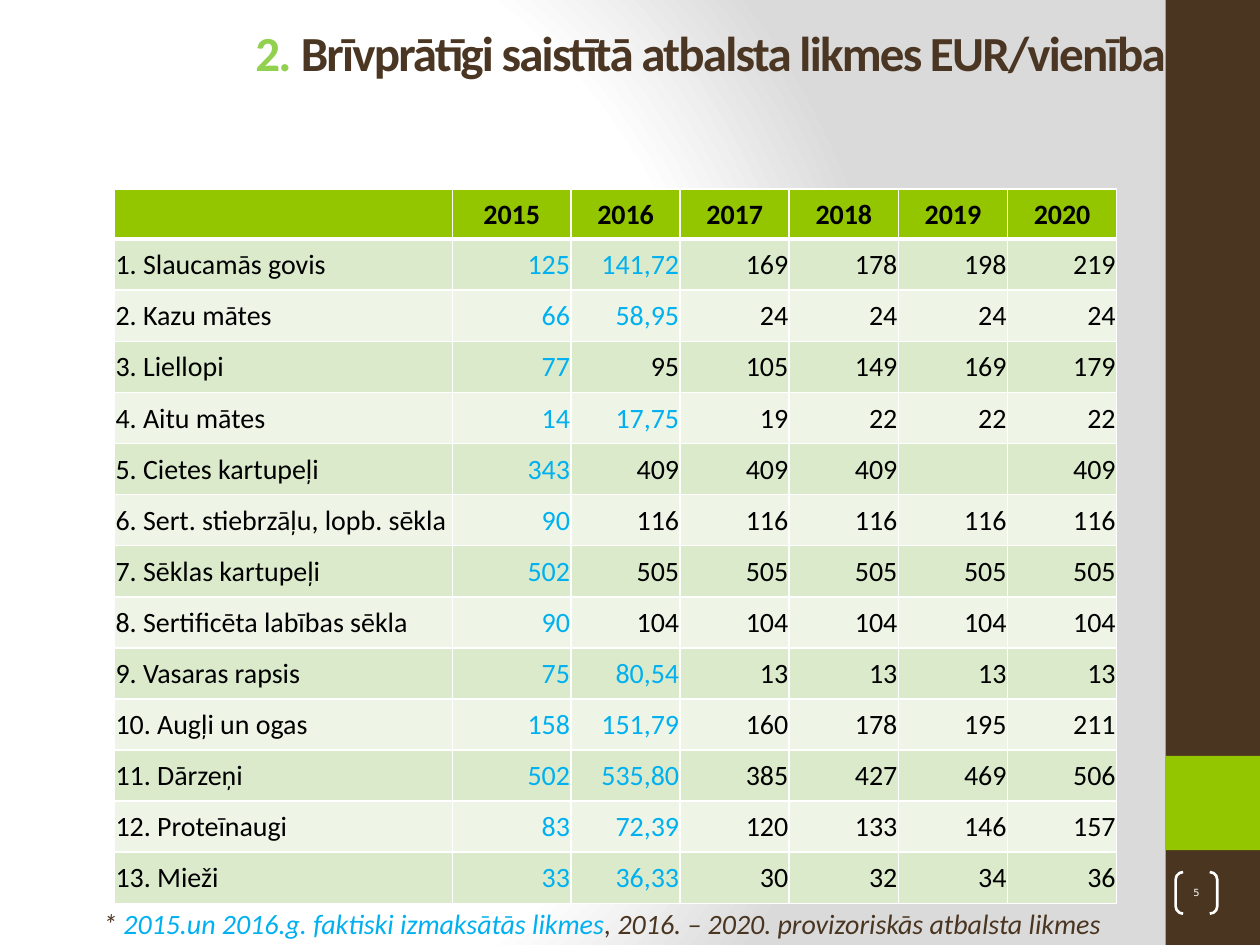
from lxml import etree
from pptx import Presentation
from pptx.dml.color import RGBColor
from pptx.enum.shapes import MSO_SHAPE
from pptx.enum.text import MSO_ANCHOR, PP_ALIGN
from pptx.oxml import parse_xml
from pptx.oxml.ns import nsdecls, qn
from pptx.util import Cm, Pt

RECTANGLE, BRACKETS = MSO_SHAPE.RECTANGLE, MSO_SHAPE.DOUBLE_BRACKET
TOP, MIDDLE = MSO_ANCHOR.TOP, MSO_ANCHOR.MIDDLE
LEFT, CENTER, RIGHT = PP_ALIGN.LEFT, PP_ALIGN.CENTER, PP_ALIGN.RIGHT

COLORS = {
    "brown": "4A3521", "title": "4A3622", "green": "94C600", "number": "92D050",
    "paid": "00B0F0", "black": "000000", "white": "FFFFFF", "edge": "DADADA",
    "odd": "DCEACC", "even": "EEF5E7",
}
YEARS = ["", "2015", "2016", "2017", "2018", "2019", "2020"]
RATES = [
    ["1. Slaucamās govis", "125", "141,72", "169", "178", "198", "219"],
    ["2. Kazu mātes", "66", "58,95", "24", "24", "24", "24"],
    ["3. Liellopi", "77", "95", "105", "149", "169", "179"],
    ["4. Aitu mātes", "14", "17,75", "19", "22", "22", "22"],
    ["5. Cietes kartupeļi", "343", "409", "409", "409", "", "409"],
    ["6. Sert. stiebrzāļu, lopb. sēkla", "90", "116", "116", "116", "116", "116"],
    ["7. Sēklas kartupeļi", "502", "505", "505", "505", "505", "505"],
    ["8. Sertificēta labības sēkla", "90", "104", "104", "104", "104", "104"],
    ["9. Vasaras rapsis", "75", "80,54", "13", "13", "13", "13"],
    ["10. Augļi un ogas", "158", "151,79", "160", "178", "195", "211"],
    ["11. Dārzeņi", "502", "535,80", "385", "427", "469", "506"],
    ["12. Proteīnaugi", "83", "72,39", "120", "133", "146", "157"],
    ["13. Mieži", "33", "36,33", "30", "32", "34", "36"],
]
COLUMN_WIDTHS = [6.81, 2.39] + [2.2] * 5
HEADER_HEIGHT, ROW_HEIGHT = 1.01, 1.03


class SlideBuilder:
    """Hold the style and the current slide, and add each kind of element."""

    def __init__(self, slide, font="Calibri"):
        self.slide = slide
        self.font = font

    def color(self, name):
        return RGBColor.from_string(COLORS[name])

    def background(self):
        fill = self.slide.background.fill
        fill.gradient()
        bg_props = self.slide.background._cSld.bg.bgPr
        stops = "".join(
            f'<a:gs pos="{position * 1000}"><a:srgbClr val="{COLORS[name]}"/></a:gs>'
            for position, name in [(0, "white"), (75, "white"), (100, "edge")])
        gradient = parse_xml(
            f'<a:gradFill {nsdecls("a")} rotWithShape="1"><a:gsLst>{stops}</a:gsLst>'
            '<a:path path="circle"><a:fillToRect l="20000" t="50000" r="100000" b="50000"/>'
            '</a:path></a:gradFill>')
        bg_props.replace(bg_props.find(qn("a:gradFill")), gradient)

    def style(self, run, color, size, font=None, bold=False, italic=False):
        run.font.name = font or self.font
        run.font.size = Pt(size)
        run.font.bold = bold
        run.font.italic = italic
        run.font.color.rgb = self.color(color)

    def block(self, left, top, width, height, color):
        block = self.slide.shapes.add_shape(
            RECTANGLE, Cm(left), Cm(top), Cm(width), Cm(height))
        block.shadow.inherit = False
        block.fill.solid()
        block.fill.fore_color.rgb = self.color(color)
        block.line.fill.background()

    def page_number(self, left, top, side, number):
        badge = self.slide.shapes.add_shape(
            BRACKETS, Cm(left), Cm(top), Cm(side), Cm(side))
        badge.adjustments[0] = 0.18
        badge.shadow.inherit = False
        badge.fill.background()
        badge.line.color.rgb = self.color("white")
        badge.line.width = Pt(1.5)
        frame = badge.text_frame
        frame.margin_left = frame.margin_right = frame.margin_top = frame.margin_bottom = 0
        frame.vertical_anchor = MIDDLE
        frame.text = number
        frame.paragraphs[0].alignment = CENTER
        self.style(frame.paragraphs[0].runs[0], "white", 5.6, "DejaVu Sans")

    def text(self, left, top, width, height, parts, size, anchor=TOP, spacing=0, **weight):
        frame = self.slide.shapes.add_textbox(
            Cm(left), Cm(top), Cm(width), Cm(height)).text_frame
        frame.word_wrap = True
        frame.vertical_anchor = anchor
        for words, color in parts:
            run = frame.paragraphs[0].add_run()
            run.text = words
            self.style(run, color, size, **weight)
            if spacing:
                run.font._element.set("spc", str(spacing * 100))

    def borders(self, cell, bottom):
        props = cell._tc.get_or_add_tcPr()
        for side, points in [("L", 1), ("R", 1), ("T", 1), ("B", bottom)]:
            line = etree.SubElement(props, qn(f"a:ln{side}"), w=str(Pt(points)))
            fill = etree.SubElement(line, qn("a:solidFill"))
            etree.SubElement(fill, qn("a:srgbClr"), val=COLORS["white"])

    def cell(self, cell, words, fill, color, alignment, bold=False, bottom=1):
        self.borders(cell, bottom)
        cell.fill.solid()
        cell.fill.fore_color.rgb = self.color(fill)
        cell.margin_left = cell.margin_right = cell.margin_top = Cm(0.02)
        cell.margin_bottom = 0
        cell.vertical_anchor = MIDDLE
        cell.text_frame.text = words
        paragraph = cell.text_frame.paragraphs[0]
        paragraph.alignment = alignment
        for run in paragraph.runs:
            self.style(run, color, 16, bold=bold)

    def table(self, left, top, header, rows):
        height = HEADER_HEIGHT + ROW_HEIGHT * len(rows)
        table = self.slide.shapes.add_table(
            len(rows) + 1, len(header), Cm(left), Cm(top),
            Cm(sum(COLUMN_WIDTHS)), Cm(height)).table
        for column, width in zip(table.columns, COLUMN_WIDTHS):
            column.width = Cm(width)
        for index, row in enumerate(table.rows):
            row.height = Cm(ROW_HEIGHT if index else HEADER_HEIGHT)
        for column, year in enumerate(header):
            self.cell(table.cell(0, column), year, "green", "black", CENTER, True, 3)
        for index, rates in enumerate(rows, 1):
            band = "odd" if index % 2 else "even"
            for column, rate in enumerate(rates):
                paid = column == 1 or "," in rate and column == 2
                self.cell(table.cell(index, column), rate, band,
                          "paid" if paid else "black", RIGHT if column else LEFT)


def main():
    deck = Presentation()
    deck.slide_width, deck.slide_height = Cm(25.4), Cm(19.05)
    builder = SlideBuilder(deck.slides.add_slide(deck.slide_layouts[6]))
    builder.background()
    builder.block(23.5, 0, 1.9, 19.05, "brown")
    builder.block(23.5, 15.24, 1.9, 1.9, "green")
    builder.page_number(23.7, 17.58, 0.84, "5")
    builder.text(4.9, 0.33, 19.23, 1.8,
                 [("2. ", "number"),
                  ("Brīvprātīgi saistītā atbalsta likmes EUR/vienība", "title")],
                 28, spacing=-1, bold=True)
    builder.table(2.31, 3.81, YEARS, RATES)
    builder.text(1.83, 18.24, 22.2, 0.76,
                 [("* ", "brown"),
                  ("2015.un 2016.g. faktiski izmaksātās likmes", "paid"),
                  (", 2016. – 2020. provizoriskās atbalsta likmes", "brown")],
                 16, MIDDLE, italic=True)
    deck.save("out.pptx")


if __name__ == "__main__":
    main()
